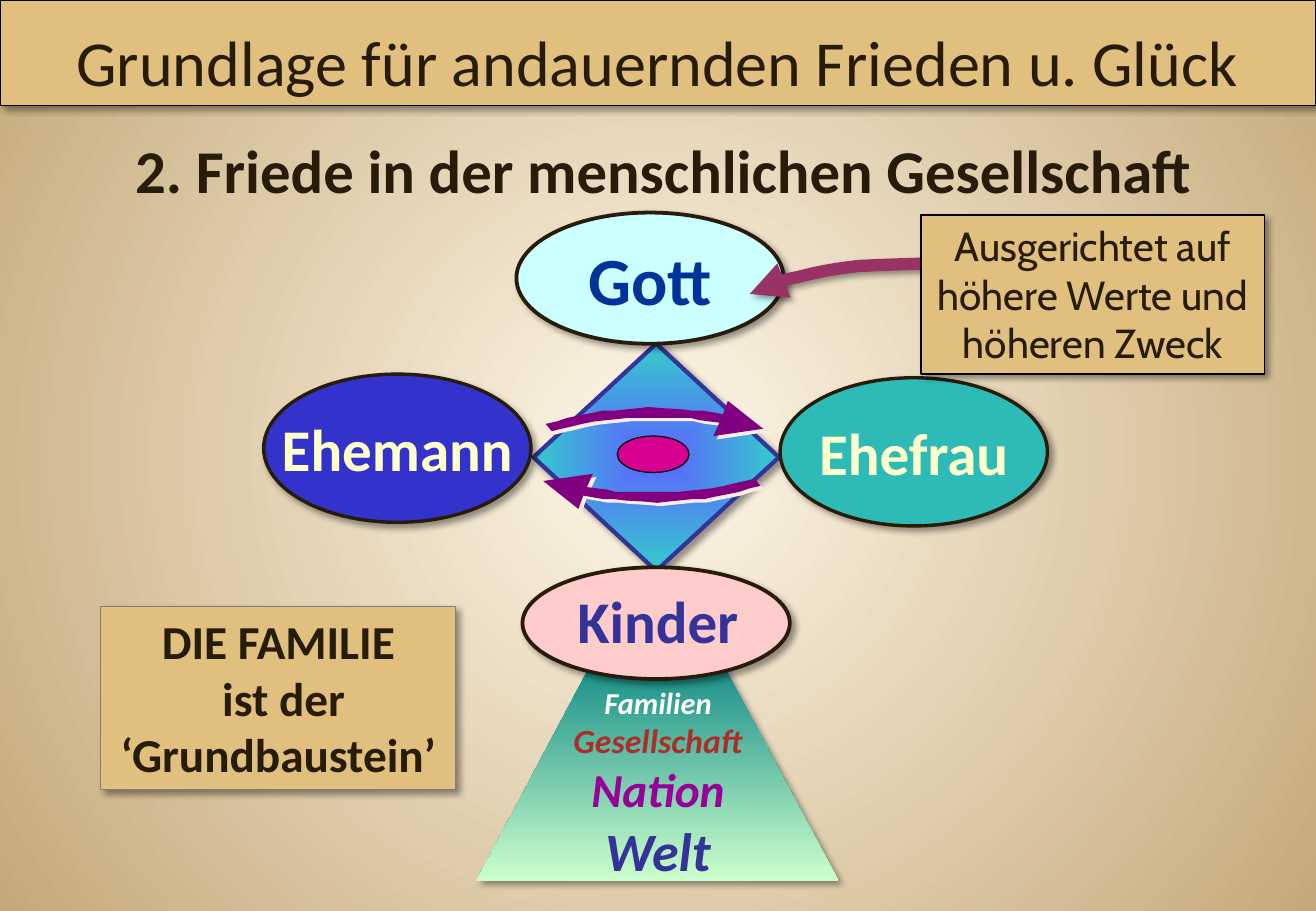
from lxml import etree
from pptx import Presentation
from pptx.dml.color import RGBColor
from pptx.enum import shapes, text as txt
from pptx.oxml.ns import qn
from pptx.util import Pt

PX = 9144  # EMU per px, 100 px to the inch
COLOURS = {
    "ink": "261C09", "sand": "E1BF7E", "cream": "FFF7E8", "dune": "C4AA7A",
    "black": "000000", "grey": "808080", "white": "FFFFFF", "ivory": "FFFFCC",
    "halo": "F7EEDD", "teal": "008080", "mint": "CCFFCC", "indigo": "333399",
    "periwinkle": "5D64FF", "turquoise": "33CCCC", "blue": "3333CC",
    "sea": "2EBBB8", "ice": "CCFFFF", "navy": "003399", "rose": "FFCCCC",
    "magenta": "D60093", "purple": "800080", "violet": "990099",
    "brick": "AD2E27", "plum": "993366",
}
SOFT_SHADOW = ("black", 40, 4, 3)
HALO_SHADOW = ("halo", 100, 0, 2.8)
RGB = {name: RGBColor.from_string(value) for name, value in COLOURS.items()}


def style(shape, fill=None, line=None, width=0.75, shadow=SOFT_SHADOW):
    """Set fill, outline and shadow; shadow is colour, opacity %, blur pt, distance pt."""
    if fill:
        shape.fill.solid()
        shape.fill.fore_color.rgb = RGB[fill]
    else:
        shape.fill.background()
    if line:
        shape.line.color.rgb = RGB[line]
        shape.line.width = Pt(width)
    else:
        shape.line.fill.background()
    shape.shadow.inherit = False
    if shadow:
        colour, opacity, blur, distance = shadow
        effects = shape._element.spPr.find(qn("a:effectLst"))
        outer = etree.SubElement(effects, qn("a:outerShdw"), blurRad=str(Pt(blur)),
                                 dist=str(Pt(distance)), dir="2700000",
                                 algn="ctr", rotWithShape="0")
        tint = etree.SubElement(outer, qn("a:srgbClr"), val=COLOURS[colour])
        etree.SubElement(tint, qn("a:alpha"), val=str(opacity * 1000))
    return shape


def write(shape, text, size, colour="ink", bold=True, italic=False, font="Calibri",
          anchor="TOP", wrap=True, spacing=None, same_line=False):
    """Add text as a new centred paragraph, or to the last one if same_line."""
    frame = shape.text_frame
    frame.word_wrap = wrap
    frame.vertical_anchor = txt.MSO_ANCHOR[anchor]
    if frame.text and not same_line:
        frame.add_paragraph()
    paragraph = frame.paragraphs[-1]
    paragraph.alignment = txt.PP_ALIGN.CENTER
    if spacing:
        paragraph.line_spacing = spacing
    run = paragraph.add_run()
    run.text = text
    run.font.size = Pt(size)
    run.font.name = font
    run.font.bold = bold
    run.font.italic = italic
    run.font.color.rgb = RGB[colour]


prs = Presentation()
prs.slide_width, prs.slide_height = 1083 * PX, 750 * PX
slide = prs.slides.add_slide(prs.slide_layouts[6])
canvas = slide.shapes
KIND = shapes.MSO_SHAPE

# Pyramid from families to the world
outline = canvas.build_freeform(690, 725, scale=PX)
outline.add_line_segments([(583, 525), (498, 525), (392, 725)], close=True)
pyramid = style(outline.convert_to_shape(), "teal")
levels = canvas.add_textbox(*(n * PX for n in (458, 558, 167, 175)))
for level, size, colour, same_line in [
    ("Familien ", 18, "white", False),
    ("Gesellschaft", 20, "brick", True),
    ("Nation", 28, "violet", False),
    ("Welt", 32, "indigo", False),
]:
    write(levels, level, size, colour, italic=True, same_line=same_line)

diamond = canvas.add_shape(KIND.DIAMOND, *(n * PX for n in (439, 283, 202, 187)))
style(diamond, "turquoise", "indigo", 2.5)

# Gradients of the background, the diamond and the pyramid
for fill, start, end, centred in [
    (slide.background.fill, "cream", "dune", "circle"),
    (diamond.fill, "periwinkle", "turquoise", "shape"),
    (pyramid.fill, "teal", "mint", None),
]:
    fill.gradient()
    for stop, colour, position in zip(fill.gradient_stops, (start, end), (0, 1)):
        stop.color.rgb = RGB[colour]
        stop.position = position
    fill.gradient_angle = 270
    if centred:
        gradient = fill._xPr.find(qn("a:gradFill"))
        gradient.remove(gradient.find(qn("a:lin")))
        focus = etree.SubElement(gradient, qn("a:path"), path=centred)
        etree.SubElement(focus, qn("a:fillToRect"),
                         {side: "50000" for side in "ltrb"})

# Family members
for member, box, fill, size, colour, width in [
    ("Ehemann", (217, 308, 220, 122), "blue", 35, "ivory", 2),
    ("Ehefrau", (642, 311, 220, 122), "sea", 35, "ivory", 2),
    ("Gott", (425, 175, 220, 108), "ice", 40, "navy", 2.25),
]:
    oval = canvas.add_shape(KIND.OVAL, *(n * PX for n in box))
    style(oval, fill, "ink", width)
    write(oval, member, size, colour, anchor="MIDDLE", wrap=False)

heading = canvas.add_textbox(*(n * PX for n in (25, 104, 1042, 71)))
write(heading, "2. Friede in der menschlichen Gesellschaft", 36)

children = canvas.add_shape(KIND.OVAL, *(n * PX for n in (430, 467, 220, 92)))
style(children, "rose", "ink", 2.25)
children_label = canvas.add_textbox(*(n * PX for n in (433, 492, 217, 54)))
write(children_label, "Kinder", 35, "indigo", spacing=0.7)

core = canvas.add_shape(KIND.OVAL, *(n * PX for n in (508, 359, 59, 30)))
style(core, "magenta", "black", shadow=None)

# Give and take: the lower arrow is the upper one turned by half
to_wife = [
    (592, 348), (576, 346), (568, 344), (560, 344), (543, 344), (527, 344),
    (517, 344), (508, 345), (498, 346), (489, 347), (479, 349), (471, 351),
    (462, 353), (454, 355), (449, 349), (458, 347), (467, 344), (477, 342),
    (487, 340), (496, 338), (506, 338), (516, 337), (526, 336), (534, 335),
    (544, 336), (561, 337), (569, 338), (578, 338), (595, 341), (599, 330),
    (628, 353), (587, 359),
]
to_husband = [(1075 - x, 749 - y) for x, y in to_wife]
for arrow in (to_wife, to_husband):
    outline = canvas.build_freeform(*arrow[0], scale=PX)
    outline.add_line_segments(arrow[1:], close=True)
    style(outline.convert_to_shape(), "purple", shadow=HALO_SHADOW)

title = canvas.add_shape(KIND.RECTANGLE, 0, 0, 1083 * PX, 87 * PX)
style(title, "sand", "black")
write(title, "Grundlage für andauernden Frieden u. Glück", 38, bold=False, anchor="BOTTOM")

family = canvas.add_shape(KIND.RECTANGLE, *(n * PX for n in (83, 499, 292, 151)))
style(family, "sand", "grey")
for words in ("DIE FAMILIE", " ist der", "‘Grundbaustein’"):
    write(family, words, 28)

# Curved pointer: every three points after the start make one Bézier segment
outline = canvas.build_freeform(617, 242, scale=PX)
outline.add_line_segments([
    (629, 237), (642, 231), (657, 228), (672, 224), (688, 221), (707, 219),
    (725, 218), (757, 217), (767, 217),
], close=False)
pointer = style(outline.convert_to_shape(), None, "plum", 7.25)
curve = pointer._element.xpath(".//a:path")[0]
segments = curve.findall(qn("a:lnTo"))
for first in range(0, len(segments), 3):
    bezier = etree.SubElement(curve, qn("a:cubicBezTo"))
    for segment in segments[first:first + 3]:
        bezier.append(segment[0])
        curve.remove(segment)
etree.SubElement(pointer._element.spPr.find(qn("a:ln")), qn("a:headEnd"), type="triangle")

purpose = canvas.add_shape(KIND.RECTANGLE, *(n * PX for n in (758, 177, 283, 131)))
style(purpose, "sand", "black")
write(purpose, "Ausgerichtet auf höhere Werte und höheren Zweck", 24, bold=False, font="Cabin")

prs.save("out.pptx")
